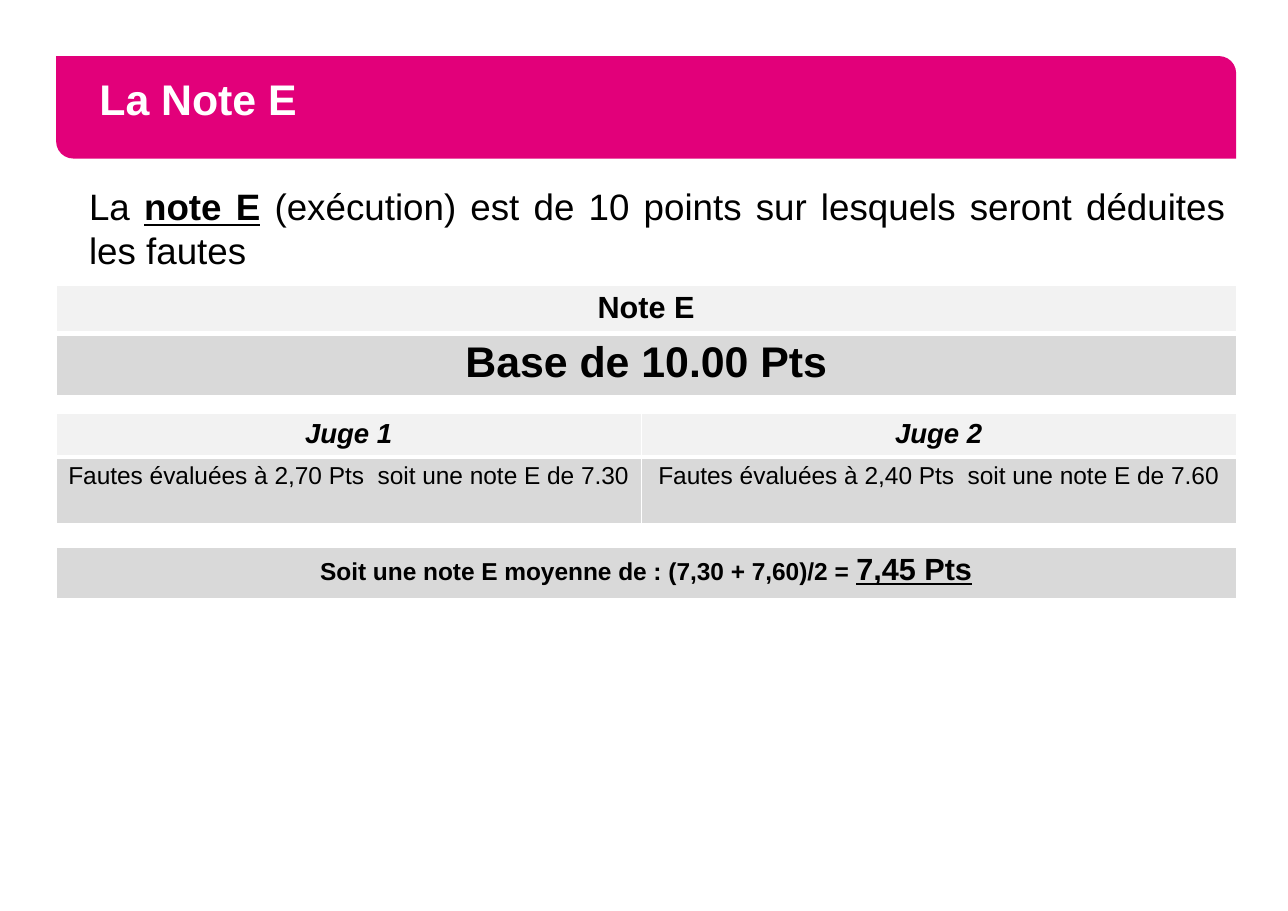
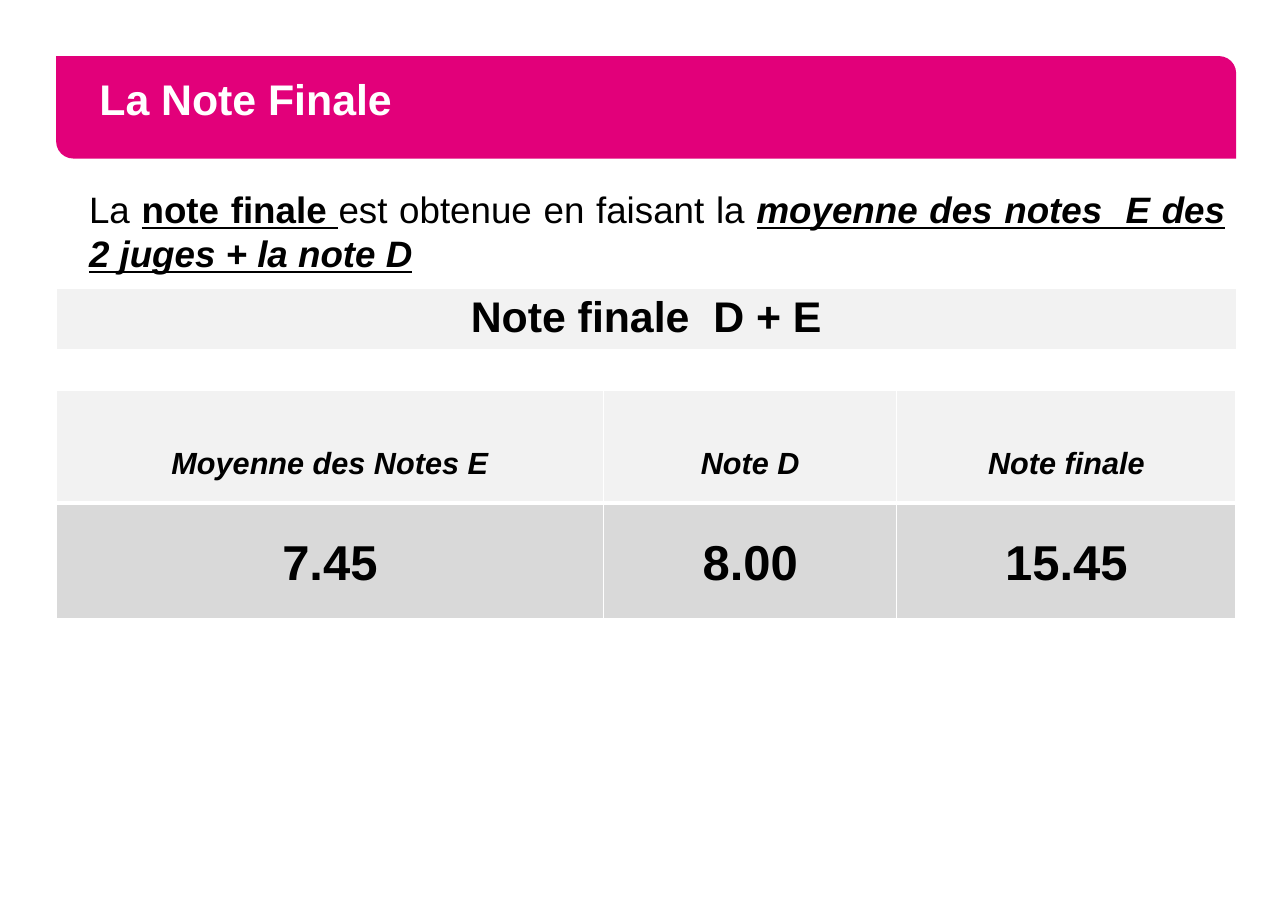
import pptx
import pptx.dml.color
import pptx.enum.shapes
import pptx.enum.text
import pptx.oxml
import pptx.oxml.ns
import pptx.util

Pt = pptx.util.Pt
Align = pptx.enum.text.PP_ALIGN
Anchor = pptx.enum.text.MSO_ANCHOR

LEFT, WIDTH = 36.72, 771.12
PINK, WHITE, BLACK = "E2007A", "FFFFFF", "000000"
LIGHT, GREY = "F2F2F2", "D9D9D9"
KEY = {"bold": True, "underline": True}


def color(value):
    return pptx.dml.color.RGBColor.from_string(value)


class Deck:
    """Holds the shared style and the current slide."""

    def __init__(self):
        self.deck = pptx.Presentation()
        self.deck.slide_width = Pt(841.68)
        self.deck.slide_height = Pt(595.44)
        self.page = None

    def add_page(self, title):
        self.page = self.deck.slides.add_slide(self.deck.slide_layouts[6])
        self.title(title)

    def fill_para(self, para, spans, base, **layout):
        """Fill a paragraph with (text, format) spans over a base format."""
        for name, value in layout.items():
            setattr(para, name, value)
        for text, changes in spans:
            span = para.add_run()
            span.text = text
            look = {"name": "Arial", "color": BLACK, **base, **changes}
            span.font.color.rgb = color(look.pop("color"))
            span.font.size = Pt(look.pop("size"))
            for name, value in look.items():
                setattr(span.font, name, value)

    def title(self, text):
        kind = pptx.enum.shapes.MSO_SHAPE.ROUND_2_DIAG_RECTANGLE
        band = self.page.shapes.add_shape(
            kind, Pt(LEFT), Pt(36.72), Pt(WIDTH), Pt(66.96))
        band.shadow.inherit = False
        band.fill.solid()
        band.fill.fore_color.rgb = color(PINK)
        band.line.fill.background()
        band._element.spPr.xfrm.set("flipH", "1")
        frame = band.text_frame
        frame.vertical_anchor = Anchor.MIDDLE
        frame.margin_left = frame.margin_right = Pt(25)
        self.fill_para(frame.paragraphs[0], [(text, {})],
                       {"size": 28, "bold": True, "color": WHITE},
                       alignment=Align.LEFT, line_spacing=Pt(22))

    def intro(self, top, spans):
        box = self.page.shapes.add_textbox(
            Pt(LEFT), Pt(top), Pt(WIDTH), Pt(65.52))
        box.text_frame.word_wrap = True
        para = box.text_frame.paragraphs[0]
        para._p.get_or_add_pPr().set("marL", str(Pt(14.4)))
        self.fill_para(para, spans, {"size": 24},
                       alignment=Align.JUSTIFY, space_after=Pt(6))

    def table(self, top, widths, rows):
        """Draw rows given as (height, fill, format, line spacing, cells)."""
        heights = [row[0] for row in rows]
        grid = self.page.shapes.add_table(
            len(rows), len(widths), Pt(LEFT), Pt(top),
            Pt(sum(widths)), Pt(sum(heights))).table
        for column, width in zip(grid.columns, widths):
            column.width = Pt(width)
        for index, (height, fill, base, spacing, cells) in enumerate(rows):
            grid.rows[index].height = Pt(height)
            for cell, spans in zip(grid.rows[index].cells, cells):
                self.borders(cell, top=3 if index else 1,
                             bottom=1 if index else 3)
                cell.fill.solid()
                cell.fill.fore_color.rgb = color(fill)
                self.fill_para(cell.text_frame.paragraphs[0], spans, base,
                               alignment=Align.CENTER, line_spacing=spacing)

    def borders(self, cell, top, bottom):
        namespace = pptx.oxml.ns.nsdecls("a")
        sides = {"lnL": 1, "lnR": 1, "lnT": top, "lnB": bottom}
        for side, width in sides.items():
            cell._tc.get_or_add_tcPr().append(pptx.oxml.parse_xml(
                f'<a:{side} {namespace} w="{Pt(width)}"><a:solidFill>'
                f'<a:srgbClr val="{WHITE}"/></a:solidFill></a:{side}>'))


def plain(*texts):
    """One unformatted span per cell."""
    return [[(text, {})] for text in texts]


def main():
    show = Deck()
    bold = {"bold": True}
    slanted = {"bold": True, "italic": True}

    # Execution score
    show.add_page("La Note E")
    show.intro(116.64, [
        ("La ", {}), ("note E", KEY),
        (" (exécution) est de 10 points sur lesquels seront déduites "
         "les fautes", {})])
    show.table(186.48, [WIDTH], [
        (31.5, LIGHT, {"size": 20, **bold}, 1.0, plain("Note E")),
        (40.5, GREY, {"size": 28, **bold}, 1.0, plain("Base de 10.00 Pts"))])
    show.table(270, [382.32, 388.8], [
        (28.8, LIGHT, {"size": 18, **slanted}, 1.0,
         plain("Juge 1", "Juge 2")),
        (43.2, GREY, {"size": 16, "bold": False}, 1.0,
         plain("Fautes évaluées à 2,70 Pts  soit une note E de 7.30",
               "Fautes évaluées à 2,40 Pts  soit une note E de 7.60"))])
    show.table(357.84, [WIDTH], [
        (34.56, GREY, {"size": 16, **bold}, 1.0,
         [[("Soit une note E moyenne de : (7,30 + 7,60)/2 = ", {}),
           ("7,45 Pts", {"size": 20, "underline": True})]])])

    # Final score
    show.add_page("La Note Finale")
    show.intro(118.8, [
        ("La ", {}), ("note finale ", KEY),
        ("est obtenue en faisant la ", {}),
        ("moyenne des notes  E des 2 juges + la note D",
         {**KEY, "italic": True})])
    show.table(188.64, [WIDTH], [
        (40.5, LIGHT, {"size": 28, **bold}, 1.0,
         plain("Note finale  D + E"))])
    show.table(254.88, [357.84, 191.52, 221.76], [
        (74.16, LIGHT, {"size": 20, **slanted}, 2.5,
         plain("Moyenne des Notes E", "Note D", "Note finale")),
        (75.6, GREY, {"size": 32, **bold}, 1.5,
         plain("7.45", "8.00", "15.45"))])

    show.deck.save("out.pptx")


if __name__ == "__main__":
    main()
